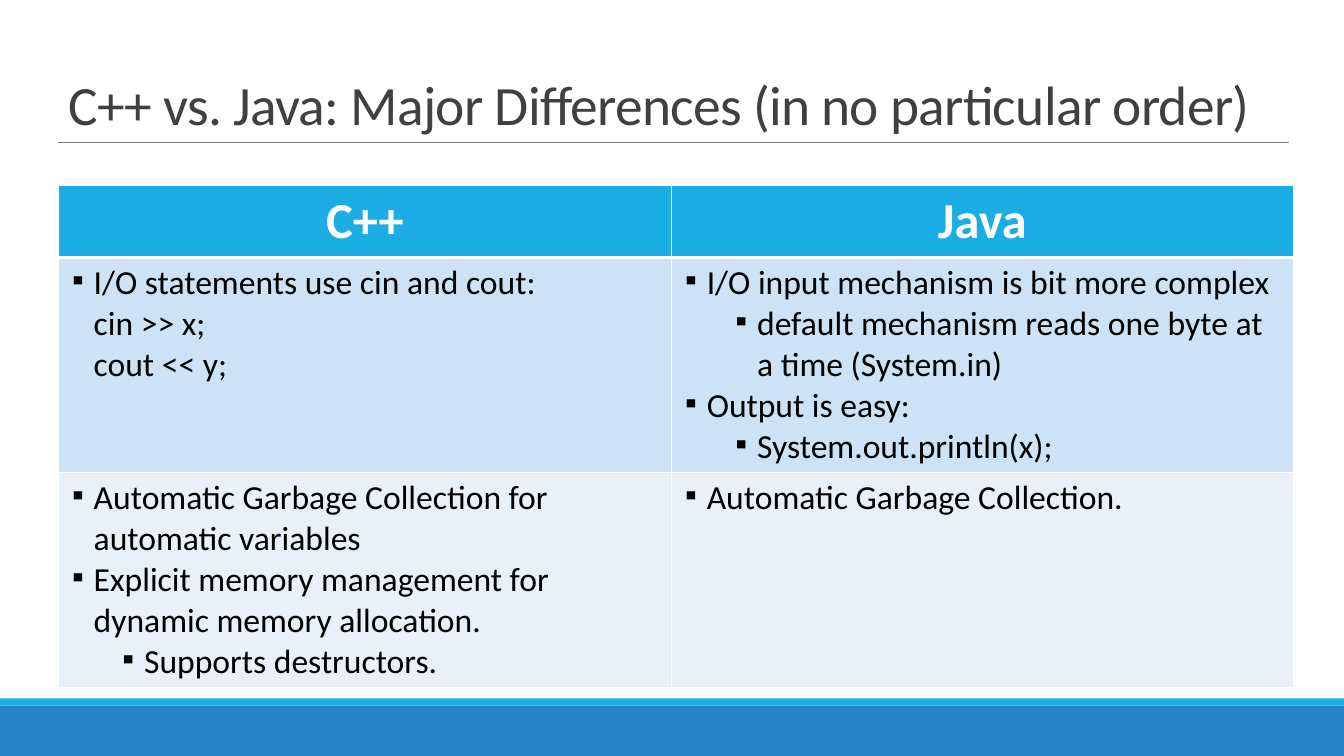
from dataclasses import dataclass

from lxml.etree import SubElement
from pptx import Presentation
from pptx.dml.color import RGBColor
from pptx.enum.shapes import MSO_CONNECTOR, MSO_SHAPE
from pptx.enum.text import MSO_ANCHOR, PP_ALIGN
from pptx.oxml import parse_xml
from pptx.oxml.ns import nsdecls, qn
from pptx.util import Pt


@dataclass(frozen=True)
class Theme:
    font: str = "Calibri"
    title_size: float = 39.6
    header_size: float = 36
    body_size: float = 24
    title: str = "404040"
    body: str = "000000"
    white: str = "FFFFFF"
    rule: str = "808080"
    footer: str = "2683C6"
    accent: str = "1CADE4"
    bands: tuple = ("CDE3F5", "E8F1FA")


THEME = Theme()
LEFT = 41.76
INDENT = 18
LEVEL_STEP = 36
BULLET = "▪"
PLAIN = None

TITLE = "C++ vs. Java: Major Differences (in no particular order)"
HEADERS = ("C++", "Java")
COMPARISONS = (
    (
        (
            (0, "I/O statements use cin and cout:"),
            (PLAIN, "cin >> x;"),
            (PLAIN, "cout << y;"),
        ),
        (
            (0, "I/O input mechanism is bit more complex"),
            (1, "default mechanism reads one byte at a time (System.in)"),
            (0, "Output is easy:"),
            (1, "System.out.println(x);"),
        ),
    ),
    (
        (
            (0, "Automatic Garbage Collection for automatic variables"),
            (0, "Explicit memory management for dynamic memory allocation."),
            (1, "Supports destructors."),
        ),
        ((0, "Automatic Garbage Collection."),),
    ),
)


def set_attributes(target, values):
    for name, value in values.items():
        setattr(target, name, value)


def fill_solid(target, color):
    target.fill.solid()
    target.fill.fore_color.rgb = RGBColor.from_string(color)


def write_run(paragraph, text, size, color, bold=False):
    run = paragraph.add_run()
    run.text = text
    set_attributes(run.font, {"name": THEME.font, "size": Pt(size), "bold": bold})
    run.font.color.rgb = RGBColor.from_string(color)
    return run


def add_strip(slide, top, width, height, color):
    shape = slide.shapes.add_shape(
        MSO_SHAPE.RECTANGLE, Pt(0), Pt(top), Pt(width), Pt(height)
    )
    shape.shadow.inherit = False
    fill_solid(shape, color)
    shape.line.fill.background()


def add_rule(slide, left, right, top):
    connector = slide.shapes.add_connector(
        MSO_CONNECTOR.STRAIGHT, Pt(left), Pt(top), Pt(right), Pt(top)
    )
    connector.line.width = Pt(0.5)
    connector.line.color.rgb = RGBColor.from_string(THEME.rule)
    SubElement(connector._element.spPr, qn("a:effectLst"))


def add_title(slide, text):
    box = slide.shapes.add_textbox(Pt(LEFT), Pt(22.3), Pt(882), Pt(79.2))
    set_attributes(
        box.text_frame, {"word_wrap": True, "vertical_anchor": MSO_ANCHOR.BOTTOM}
    )
    paragraph = box.text_frame.paragraphs[0]
    paragraph.line_spacing = 0.85
    run = write_run(paragraph, text, THEME.title_size, THEME.title)
    run.font._element.set("spc", "-50")


def set_borders(cell, widths):
    properties = cell._tc.get_or_add_tcPr()
    for position, (side, width) in enumerate(widths.items()):
        border = parse_xml(
            f'<a:ln{side} {nsdecls("a")} w="{Pt(width)}"><a:solidFill>'
            f'<a:srgbClr val="{THEME.white}"/></a:solidFill></a:ln{side}>'
        )
        properties.insert(position, border)


def indent_paragraph(paragraph, level):
    bulleted = level is not PLAIN
    paragraph.level = level or 0
    properties = paragraph._p.get_or_add_pPr()
    margin = INDENT + LEVEL_STEP * paragraph.level
    properties.set("marL", str(Pt(margin)))
    properties.set("indent", str(Pt(-INDENT if bulleted else 0)))
    if bulleted:
        SubElement(properties, qn("a:buSzPct"), val="75000")
        SubElement(properties, qn("a:buChar"), char=BULLET)


def write_header(cell, text):
    fill_solid(cell, THEME.accent)
    set_borders(cell, {"L": 1, "R": 1, "T": 1, "B": 3})
    paragraph = cell.text_frame.paragraphs[0]
    paragraph.alignment = PP_ALIGN.CENTER
    write_run(paragraph, text, THEME.header_size, THEME.white, bold=True)


def write_points(cell, points, band, top_border):
    fill_solid(cell, band)
    set_borders(cell, {"L": 1, "R": 1, "T": top_border, "B": 1})
    frame = cell.text_frame
    for index, (level, text) in enumerate(points):
        paragraph = frame.add_paragraph() if index else frame.paragraphs[0]
        indent_paragraph(paragraph, level)
        write_run(paragraph, text, THEME.body_size, THEME.body)


def add_comparison(slide):
    widths, heights = (437.9, 444.1), (44.9, 153.4, 149)
    table = slide.shapes.add_table(
        len(heights), len(widths), Pt(LEFT), Pt(132.7), Pt(sum(widths)), Pt(sum(heights))
    ).table
    table.horz_banding = False
    for column, width in zip(table.columns, widths):
        column.width = Pt(width)
    for row, height in zip(table.rows, heights):
        row.height = Pt(height)
    for column, text in enumerate(HEADERS):
        write_header(table.cell(0, column), text)
    for row, (cells, band) in enumerate(zip(COMPARISONS, THEME.bands), start=1):
        for column, points in enumerate(cells):
            write_points(table.cell(row, column), points, band, 3 if row == 1 else 1)


def main():
    presentation = Presentation()
    set_attributes(presentation, {"slide_width": Pt(960), "slide_height": Pt(540)})
    slide = presentation.slides.add_slide(presentation.slide_layouts[6])
    add_strip(slide, 504, 960, 36, THEME.footer)
    add_strip(slide, 498.8, 960, 5.2, THEME.accent)
    add_rule(slide, LEFT, 920.4, 102)
    add_comparison(slide)
    add_title(slide, TITLE)
    presentation.save("out.pptx")


if __name__ == "__main__":
    main()
